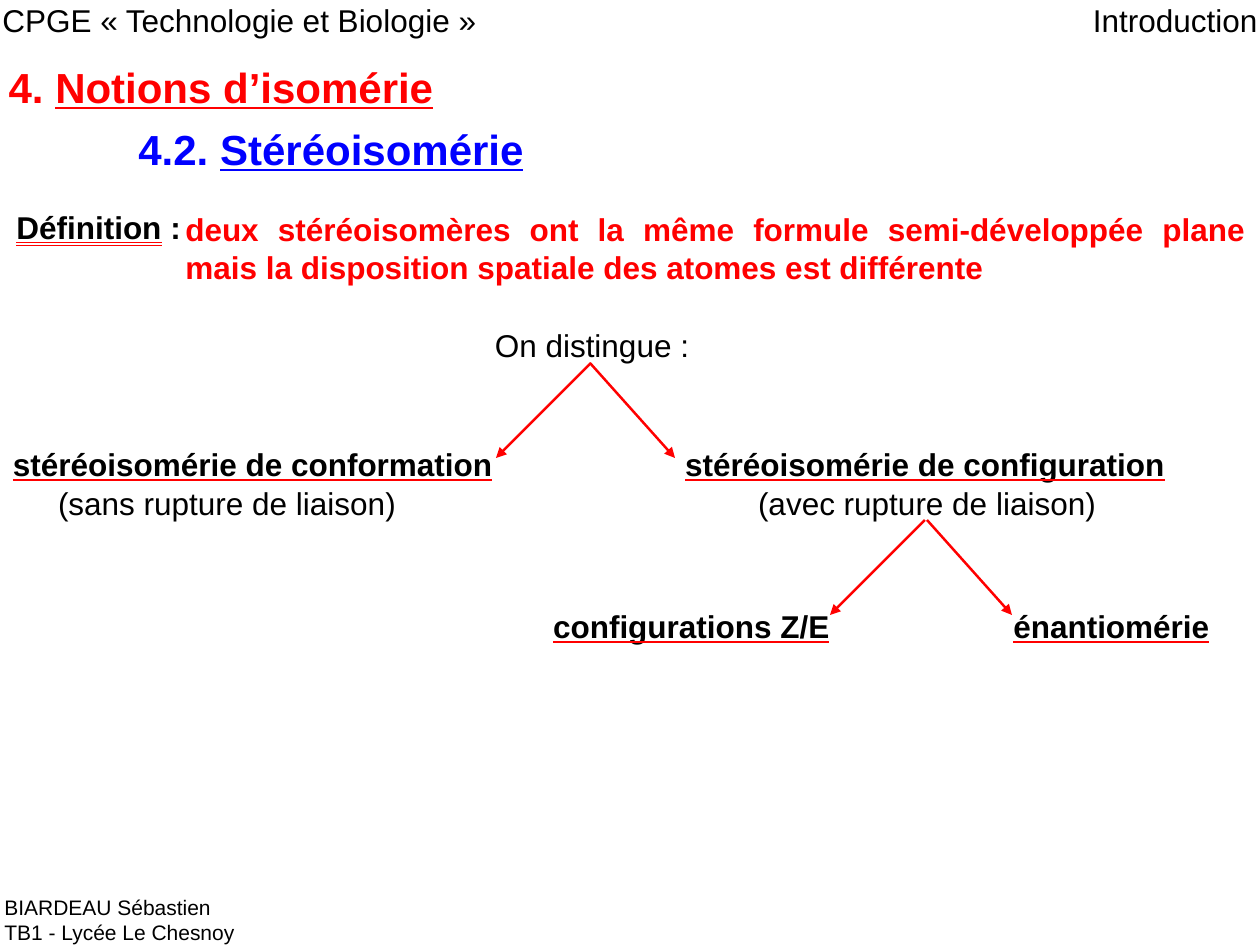
from lxml import etree
from pptx import Presentation
from pptx.dml.color import RGBColor
from pptx.enum.shapes import MSO_CONNECTOR
from pptx.enum.text import MSO_ANCHOR, MSO_AUTO_SIZE, MSO_UNDERLINE, PP_ALIGN
from pptx.oxml.ns import qn
from pptx.util import Emu, Pt

LEFT, CENTER, RIGHT, JUSTIFY = PP_ALIGN.LEFT, PP_ALIGN.CENTER, PP_ALIGN.RIGHT, PP_ALIGN.JUSTIFY
TOP, MIDDLE = MSO_ANCHOR.TOP, MSO_ANCHOR.MIDDLE
SINGLE, DOUBLE = MSO_UNDERLINE.SINGLE_LINE, MSO_UNDERLINE.DOUBLE_LINE
STRAIGHT = MSO_CONNECTOR.STRAIGHT

BLACK = RGBColor(0, 0, 0)
RED = RGBColor(255, 0, 0)
BLUE = RGBColor(0, 0, 255)

PX_PER_INCH = 126
TITLE_ONLY = 5
LINE_H = 48  # height of a box holding one 18 pt line


def px(n):
    return Emu(round(n * 914400 / PX_PER_INCH))


def underline(run, style, color):
    """Underline a run in a colour that may differ from its text."""
    run.font.underline = style
    fill = etree.Element(qn("a:uFill"))
    solid = etree.SubElement(fill, qn("a:solidFill"))
    etree.SubElement(solid, qn("a:srgbClr"), val=str(color))
    run.font._element.append(fill)


def fill_text(shape, box, lines, size=18, color=BLACK, bold=False,
              align=LEFT, anchor=TOP, indent=0):
    """Each line is a list of (text, underline style, underline colour)."""
    shape.left, shape.top, shape.width, shape.height = map(px, box)
    frame = shape.text_frame
    frame.word_wrap = True
    frame.auto_size = MSO_AUTO_SIZE.NONE
    frame.vertical_anchor = anchor
    for number, line in enumerate(lines):
        para = frame.add_paragraph() if number else frame.paragraphs[0]
        para.alignment = align
        font = para.font
        font.name, font.size, font.bold = "Arial", Pt(size), bold
        font.color.rgb = color
        if indent:
            para._p.get_or_add_pPr().set("marL", str(px(indent)))
        for text, style, line_color in line:
            run = para.add_run()
            run.text = text
            if style:
                underline(run, style, line_color)


def add_text(slide, box, lines, **style):
    fill_text(slide.shapes.add_textbox(0, 0, 0, 0), box, lines, **style)


def plain(text):
    return [(text, None, None)]


def add_arrow(slide, start, end):
    arrow = slide.shapes.add_connector(STRAIGHT, *map(px, start + end))
    arrow.line.color.rgb = RED
    arrow.line.width = Pt(1.42)
    etree.SubElement(arrow.line._get_or_add_ln(), qn("a:tailEnd"), type="triangle")
    etree.SubElement(arrow._element.spPr, qn("a:effectLst"))


def add_fork(slide, left_start, right_start, top):
    """Two arrows going down from neighbouring points."""
    bottom = top + 95
    add_arrow(slide, (left_start, top), (left_start - 95, bottom))
    add_arrow(slide, (right_start, top), (right_start + 85, bottom))


def main():
    prs = Presentation()
    prs.slide_width, prs.slide_height = px(1260), px(945)
    slide = prs.slides.add_slide(prs.slide_layouts[TITLE_ONLY])

    # Header and footer
    add_text(slide, (-10, -5, 620, LINE_H), [plain("CPGE « Technologie et Biologie »")])
    add_text(slide, (605, -5, 665, LINE_H), [plain("Introduction")], align=RIGHT)
    add_text(slide, (-8, 888, 260, 59),
             [plain("BIARDEAU Sébastien"), plain("TB1 - Lycée Le Chesnoy")], size=12)

    # Headings
    fill_text(slide.shapes.title, (-4, 55, 1264, 59),
              [[("4. ", None, None), ("Notions d’isomérie", SINGLE, RED)]],
              size=24, color=RED, bold=True)
    add_text(slide, (0, 117, 651, 106),
             [[("4.2. ", None, None), ("Stéréoisomérie", SINGLE, BLUE)]],
             size=24, color=BLUE, bold=True, indent=PX_PER_INCH)

    # Definition
    add_text(slide, (4, 202, 207, LINE_H),
             [[("Définition", DOUBLE, RED), (" :", None, None)]], bold=True)
    add_text(slide, (173, 204, 1085, 83),
             [plain("deux stéréoisomères ont la même formule semi-développée plane "
                    "mais la disposition spatiale des atomes est différente")],
             color=RED, bold=True, align=JUSTIFY)

    # Classification tree
    add_text(slide, (425, 321, 334, LINE_H), [plain("On distingue :")],
             align=CENTER, anchor=MIDDLE)
    add_fork(slide, 591, 590, 363)
    add_fork(slide, 925, 927, 520)

    for text, left, top, width, align in (
        ("stéréoisomérie de conformation", -6, 439, 511, RIGHT),
        ("stéréoisomérie de configuration", 644, 439, 562, CENTER),
        ("configurations Z/E", 397, 601, 445, RIGHT),
        ("énantiomérie", 1001, 601, 228, LEFT),
    ):
        add_text(slide, (left, top, width, LINE_H), [[(text, SINGLE, RED)]],
                 bold=True, align=align)

    for text, left in (("(sans rupture de liaison)", 21), ("(avec rupture de liaison)", 721)):
        add_text(slide, (left, 478, 412, LINE_H), [plain(text)], align=CENTER)

    prs.save("out.pptx")


if __name__ == "__main__":
    main()
